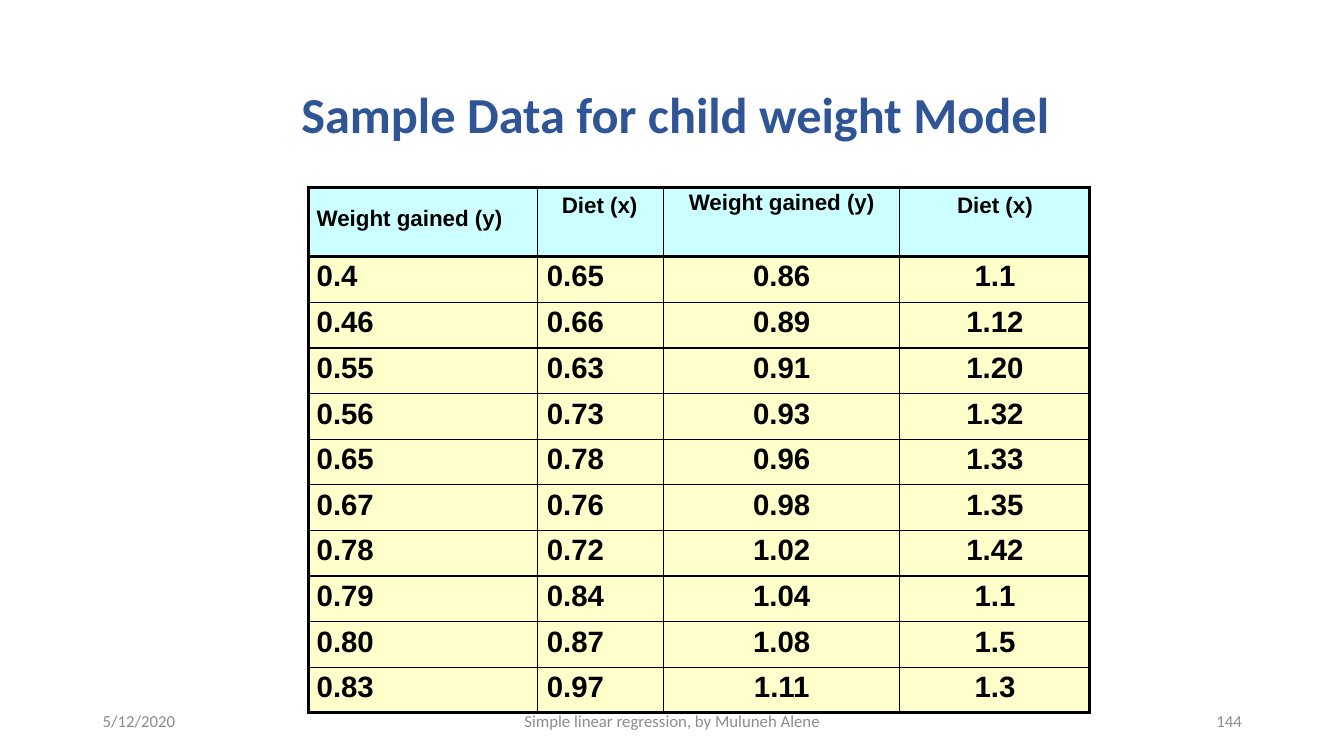
import lxml.etree
import pptx
import pptx.dml.color
import pptx.enum.text
import pptx.oxml.ns
import pptx.util

Cm = pptx.util.Cm
Pt = pptx.util.Pt
RGBColor = pptx.dml.color.RGBColor
ALIGN = pptx.enum.text.PP_ALIGN
ANCHOR = pptx.enum.text.MSO_ANCHOR

TITLE_BLUE = RGBColor(0x2F, 0x55, 0x97)
FOOTER_GREY = RGBColor(0x8C, 0x8C, 0x8C)
HEADER_CYAN = RGBColor(0xCC, 0xFF, 0xFF)
BODY_YELLOW = RGBColor(0xFF, 0xFF, 0xCC)
BLACK = RGBColor(0, 0, 0)

TITLE_FONT = {"name": "Calibri", "size": Pt(36), "bold": True}
FOOTER_FONT = {"name": "Calibri", "size": Pt(12), "bold": False}
HEADER_FONT = {"name": "Arial", "size": Pt(16), "bold": True}
BODY_FONT = {"name": "Arial", "size": Pt(21), "bold": True}


def write(frame, text, alignment, font, color):
    paragraph = frame.paragraphs[0]
    paragraph.alignment = alignment
    run = paragraph.add_run()
    run.text = text
    for name, value in font.items():
        setattr(run.font, name, value)
    run.font.color.rgb = color


def set_borders(cell, widths):
    """Draw the cell's sides; widths maps L, R, T and B, in that order, to points."""
    properties = cell._tc.get_or_add_tcPr()
    for position, (side, width) in enumerate(widths.items()):
        line = lxml.etree.Element(pptx.oxml.ns.qn(f"a:ln{side}"), w=str(Pt(width)))
        fill = lxml.etree.SubElement(line, pptx.oxml.ns.qn("a:solidFill"))
        lxml.etree.SubElement(fill, pptx.oxml.ns.qn("a:srgbClr"), val=str(BLACK))
        properties.insert(position, line)


presentation = pptx.Presentation()
presentation.slide_width = Cm(33.87)
presentation.slide_height = Cm(19.05)
slide = presentation.slides.add_slide(presentation.slide_layouts[6])

# Title
title = slide.shapes.add_textbox(Cm(7.21), Cm(2.06), Cm(19.63), Cm(1.57))
title_format = {"word_wrap": True, "vertical_anchor": ANCHOR.MIDDLE, "margin_left": 0,
                "margin_top": 0, "margin_right": 0, "margin_bottom": 0}
for name, value in title_format.items():
    setattr(title.text_frame, name, value)
write(title.text_frame, "Sample Data for child weight Model", ALIGN.CENTER, TITLE_FONT, TITLE_BLUE)

# Table: two pairs of weight and diet columns
rows = [
    ("Weight gained (y)", "Diet (x)", "Weight gained (y)", "Diet (x)"),
    ("0.4", "0.65", "0.86", "1.1"),
    ("0.46", "0.66", "0.89", "1.12"),
    ("0.55", "0.63", "0.91", "1.20"),
    ("0.56", "0.73", "0.93", "1.32"),
    ("0.65", "0.78", "0.96", "1.33"),
    ("0.67", "0.76", "0.98", "1.35"),
    ("0.78", "0.72", "1.02", "1.42"),
    ("0.79", "0.84", "1.04", "1.1"),
    ("0.80", "0.87", "1.08", "1.5"),
    ("0.83", "0.97", "1.11", "1.3"),
]
column_widths = [5.77, 3.18, 5.94, 4.78]
column_alignments = [ALIGN.LEFT, ALIGN.LEFT, ALIGN.CENTER, ALIGN.CENTER]
header_indents, body_indents = [0.2, 0.61, 0, 0.03], [0.2, 0.23, 0, 0.03]
header_tops = [0.48, 0.15, 0.08, 0.15]
header_height, body_height = 1.75, 1.15
last_row, last_column = len(rows) - 1, len(column_widths) - 1
THIN, THICK = 1, 2.25

table = slide.shapes.add_table(
    len(rows), len(column_widths), Cm(7.78), Cm(4.72),
    Cm(sum(column_widths)), Cm(header_height + last_row * body_height)).table
table.first_row = False
table.horz_banding = False
for column, width in zip(table.columns, column_widths):
    column.width = Cm(width)

for r, values in enumerate(rows):
    is_header = r == 0
    table.rows[r].height = Cm(header_height if is_header else body_height)
    for c, text in enumerate(values):
        cell = table.cell(r, c)
        cell_format = {
            "margin_left": Cm((header_indents if is_header else body_indents)[c]),
            "margin_top": Cm(header_tops[c] if is_header else 0.08 if r == 1 else 0.1),
            "margin_right": 0,
            "margin_bottom": 0,
            "vertical_anchor": ANCHOR.TOP,
        }
        for name, value in cell_format.items():
            setattr(cell, name, value)
        cell.fill.solid()
        cell.fill.fore_color.rgb = HEADER_CYAN if is_header else BODY_YELLOW
        set_borders(cell, {
            "L": THICK if c == 0 else THIN,
            "R": THICK if c == last_column else THIN,
            "T": THICK if r <= 1 else THIN,
            "B": THICK if r in (0, last_row) else THIN,
        })
        write(cell.text_frame, text, column_alignments[c],
              HEADER_FONT if is_header else BODY_FONT, BLACK)

# Footer: date, talk and slide number
for left, width, text, alignment in [
    (2.34, 7.62, "5/12/2020", ALIGN.LEFT),
    (11.23, 11.43, "Simple linear regression, by Muluneh Alene", ALIGN.CENTER),
    (23.93, 7.62, "144", ALIGN.RIGHT),
]:
    footer = slide.shapes.add_textbox(Cm(left), Cm(17.65), Cm(width), Cm(1.02))
    footer.text_frame.word_wrap = True
    footer.text_frame.vertical_anchor = ANCHOR.MIDDLE
    write(footer.text_frame, text, alignment, FOOTER_FONT, FOOTER_GREY)

presentation.save("out.pptx")
